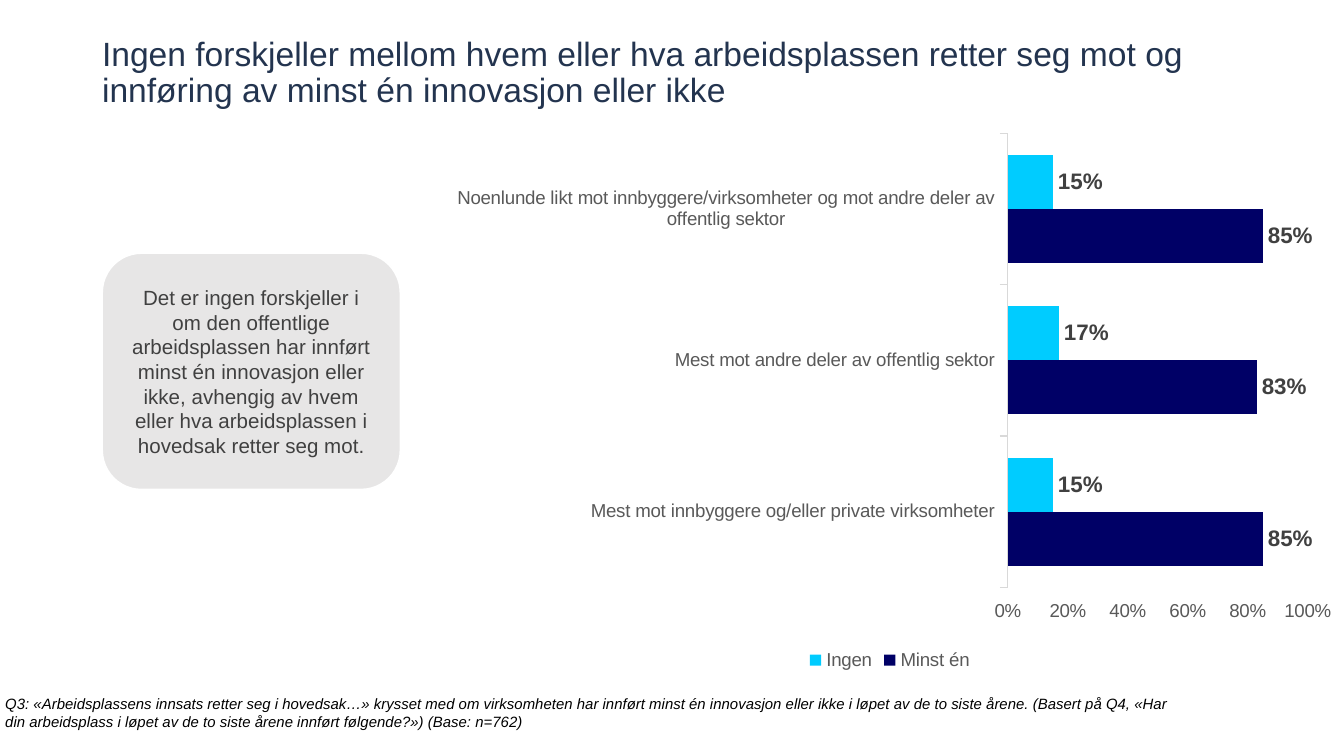
import pptx
import pptx.chart.data
import pptx.dml.color
import pptx.enum.chart
import pptx.enum.shapes
import pptx.enum.text
import pptx.oxml
import pptx.util
from pptx.util import Cm, Pt

TITLE = ("Ingen forskjeller mellom hvem eller hva arbeidsplassen retter seg mot og "
         "innføring av minst én innovasjon eller ikke")
CALLOUT = ("Det er ingen forskjeller i om den offentlige arbeidsplassen har innført "
           "minst én innovasjon eller ikke, avhengig av hvem eller hva arbeidsplassen "
           "i hovedsak retter seg mot.")
FOOTNOTE = ("Q3: «Arbeidsplassens innsats retter seg i hovedsak…» krysset med om "
            "virksomheten har innført minst én innovasjon eller ikke i løpet av de to "
            "siste årene. (Basert på Q4, «Har din arbeidsplass i løpet av de to siste "
            "årene innført følgende?») (Base: n=762)")
CATEGORIES = [
    "Mest mot innbyggere og/eller private virksomheter",
    "Mest mot andre deler av offentlig sektor",
    "Noenlunde likt mot innbyggere/virksomheter og mot andre deler av offentlig sektor",
]
SERIES = [
    ("Minst én", (0.85, 0.83, 0.85), "000066"),
    ("Ingen", (0.15, 0.17, 0.15), "00CCFF"),
]
THEME = {
    "font": "Arial",
    "title": (18, "23344F"),
    "callout": (11, "404040"),
    "footnote": (8, "000000"),
    "axis": (10, "595959"),
    "label": (12, "404040"),
    "box_fill": "E7E6E6",
    "box_line": "FFFFFF",
    "axis_line": "D9D9D9",
}
# Left, top, width, height in centimetres
TITLE_BOX = (1.93, 1.24, 22.43, 0.84)
CALLOUT_BOX = (1.93, 4.78, 5.64, 4.47)
CHART_BOX = (8.23, 2.31, 17.17, 10.46)
FOOTNOTE_BOX = (0.1, 13.13, 22.07, 0.69)
# Plot area as shares of the chart
PLOT = {"x": 0.63, "y": 0.02, "w": 0.33, "h": 0.82}


def rgb(value):
    return pptx.dml.color.RGBColor.from_string(value)


def style(font, role, bold=False, italic=False):
    size, color = THEME[role]
    font.name, font.size = THEME["font"], Pt(size)
    font.bold, font.italic = bold, italic
    font.color.rgb = rgb(color)


def add_text(slide, box, text, role, anchor, italic=False):
    tf = slide.shapes.add_textbox(*map(Cm, box)).text_frame
    tf.word_wrap = True
    tf.vertical_anchor = anchor
    tf.margin_left = tf.margin_right = tf.margin_top = tf.margin_bottom = 0
    tf.text = text
    style(tf.paragraphs[0].runs[0].font, role, italic=italic)
    return tf.paragraphs[0]


def add_callout(slide):
    sp = slide.shapes.add_shape(
        pptx.enum.shapes.MSO_SHAPE.ROUNDED_RECTANGLE, *map(Cm, CALLOUT_BOX))
    sp.shadow.inherit = False
    sp.fill.solid()
    sp.fill.fore_color.rgb = rgb(THEME["box_fill"])
    sp.line.color.rgb = rgb(THEME["box_line"])
    sp.line.width = Pt(1)
    tf = sp.text_frame
    tf.word_wrap = True
    tf.vertical_anchor = pptx.enum.text.MSO_ANCHOR.MIDDLE
    tf.text = CALLOUT
    p = tf.paragraphs[0]
    p.alignment = pptx.enum.text.PP_ALIGN.CENTER
    style(p.runs[0].font, "callout")


def set_plot_layout(chart):
    """Fix the inner plot area so the long category names get their room."""
    ns = "http://schemas.openxmlformats.org/drawingml/2006/chart"
    places = "".join(f'<c:{k} val="{v}"/>' for k, v in PLOT.items())
    layout = pptx.oxml.parse_xml(
        f'<c:layout xmlns:c="{ns}"><c:manualLayout><c:layoutTarget val="inner"/>'
        f'<c:xMode val="edge"/><c:yMode val="edge"/>{places}'
        '</c:manualLayout></c:layout>')
    area = chart._chartSpace.chart.plotArea
    for old in area.findall(f"{{{ns}}}layout"):
        area.remove(old)
    area.insert(0, layout)


def add_chart(slide):
    xl = pptx.enum.chart
    data = pptx.chart.data.CategoryChartData(number_format="0%")
    data.categories = CATEGORIES
    for name, values, _ in SERIES:
        data.add_series(name, values)
    chart = slide.shapes.add_chart(
        xl.XL_CHART_TYPE.BAR_CLUSTERED, *map(Cm, CHART_BOX), data).chart
    chart.has_title = False
    style(chart.font, "axis")
    chart.has_legend = True
    chart.legend.position = xl.XL_LEGEND_POSITION.BOTTOM
    chart.legend.include_in_layout = False
    style(chart.legend.font, "axis")

    for axis in (chart.category_axis, chart.value_axis):
        axis.has_major_gridlines = False
        axis.major_tick_mark = xl.XL_TICK_MARK.OUTSIDE
        style(axis.tick_labels.font, "axis")
    line = chart.category_axis.format.line
    line.color.rgb = rgb(THEME["axis_line"])
    line.width = Pt(0.75)
    values = chart.value_axis
    values.format.line.fill.background()
    values.minimum_scale, values.maximum_scale, values.major_unit = 0, 1, 0.2
    values.tick_labels.number_format = "0%"
    values.tick_labels.number_format_is_linked = False

    plot = chart.plots[0]
    plot.gap_width, plot.overlap = 80, 0
    plot.vary_by_categories = False
    for series, (_, _, color) in zip(plot.series, SERIES):
        series.format.fill.solid()
        series.format.fill.fore_color.rgb = rgb(color)
        labels = series.data_labels
        labels.show_value = True
        labels.position = xl.XL_LABEL_POSITION.OUTSIDE_END
        labels.number_format = "0%"
        labels.number_format_is_linked = False
        style(labels.font, "label", bold=True)
    set_plot_layout(chart)


def main():
    prs = pptx.Presentation()
    prs.slide_width, prs.slide_height = Cm(25.4), Cm(14.28)
    s = prs.slides.add_slide(prs.slide_layouts[6])
    anchor = pptx.enum.text.MSO_ANCHOR
    title = add_text(s, TITLE_BOX, TITLE, "title", anchor.BOTTOM)
    title.line_spacing = 0.9
    add_text(s, FOOTNOTE_BOX, FOOTNOTE, "footnote", anchor.TOP, italic=True)
    add_chart(s)
    add_callout(s)
    prs.save("out.pptx")


if __name__ == "__main__":
    main()
